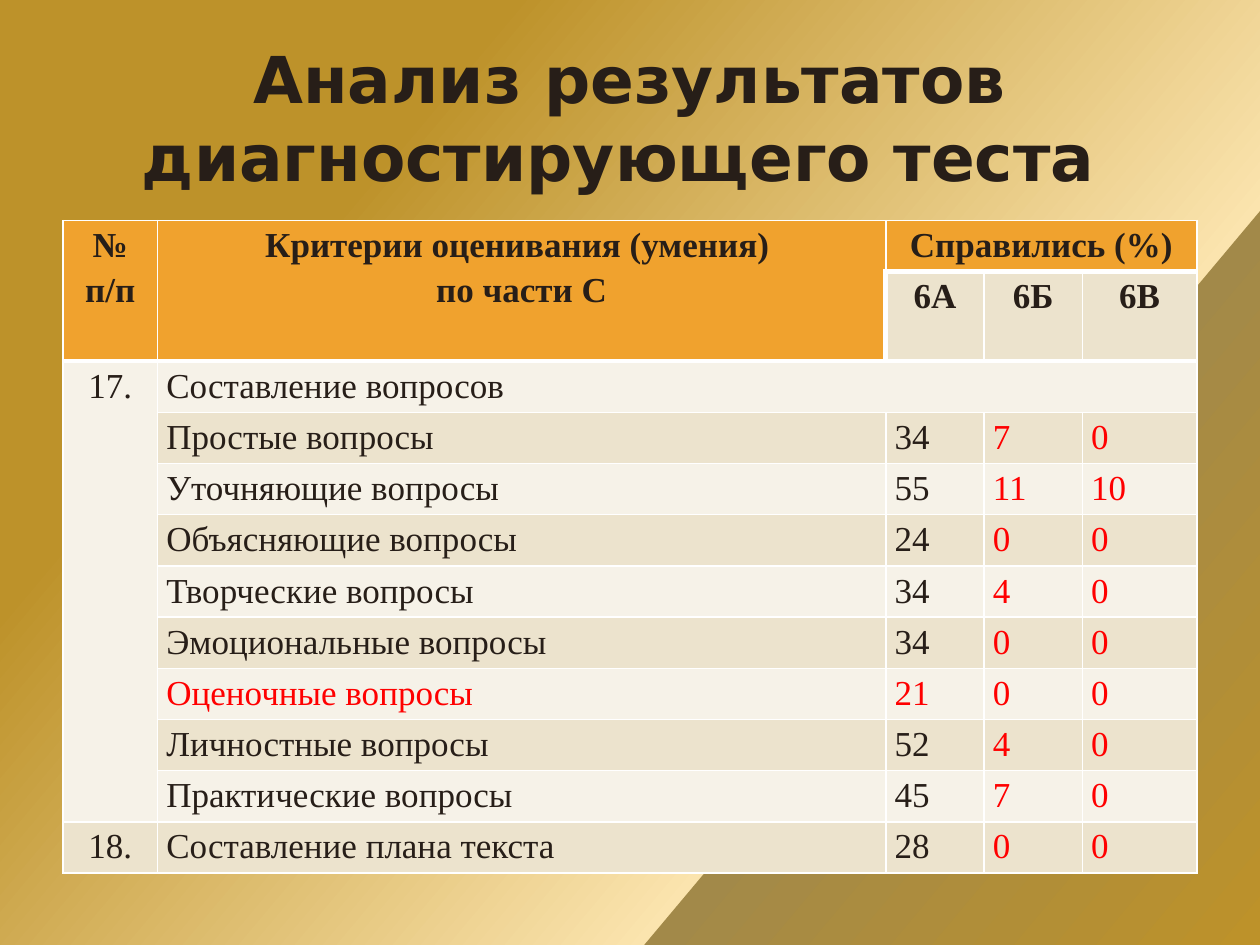
from lxml import etree
from pptx import Presentation
from pptx.dml.color import RGBColor
from pptx.enum.text import MSO_ANCHOR, MSO_AUTO_SIZE, PP_ALIGN
from pptx.oxml.ns import qn
from pptx.util import Inches, Pt

COLORS = {
    "ink": "271E18", "alert": "FF0000", "line": "FFFFFF",
    "header": "F0A22E", "band": "ECE3CD", "light": "F6F2E8",
    "gold": "BD922A", "cream": "FBE4AE", "olive": "A28949",
}
BACKDROP_STOPS = [(0, "gold"), (25, "gold"), (70, "cream"), (70, "olive"), (100, "gold")]
TITLE = "Анализ результатов диагностирующего теста "
COLUMN_WIDTHS = [0.75, 5.78, 0.78, 0.78, 0.91]
SUBHEADER_HEIGHT = 0.71
ROWS = [
    ["№ п/п", "Критерии оценивания (умения) \nпо части С", "Справились (%)", "", ""],
    ["", "", "6А", "6Б", "6В"],
    ["17.", "Составление вопросов", "", "", ""],
    ["", "Простые вопросы", "34", "7", "0"],
    ["", "Уточняющие вопросы", "55", "11", "10"],
    ["", "Объясняющие вопросы", "24", "0", "0"],
    ["", "Творческие вопросы", "34", "4", "0"],
    ["", "Эмоциональные вопросы", "34", "0", "0"],
    ["", "Оценочные вопросы", "21", "0", "0"],
    ["", "Личностные вопросы", "52", "4", "0"],
    ["", "Практические вопросы", "45", "7", "0"],
    ["18.", "Составление плана текста", "28", "0", "0"],
]
ALERT_ROW = 8
MERGES = [((0, 0), (1, 0)), ((0, 1), (1, 1)), ((0, 2), (0, 4)),
          ((2, 0), (10, 0)), ((2, 1), (2, 4))]


def rgb(name):
    return RGBColor.from_string(COLORS[name])


def style_text(frame, size, font_name, color, bold, align):
    for para in frame.paragraphs:
        para.alignment = align
        for span in para.runs:
            span.font.size = Pt(size)
            span.font.name = font_name
            span.font.bold = bold
            span.font.color.rgb = rgb(color)


def paint_background(page):
    fill = page.background.fill
    fill.gradient()
    fill.gradient_angle = 320
    stops = page.background._cSld.find(".//" + qn("a:gsLst"))
    for stop in list(stops):
        stops.remove(stop)
    for percent, color in BACKDROP_STOPS:
        stop = etree.SubElement(stops, qn("a:gs"), pos=str(percent * 1000))
        etree.SubElement(stop, qn("a:srgbClr"), val=COLORS[color])


def place_title(page, left, top, width, height):
    title = page.shapes.title
    title.left, title.top, title.width, title.height = map(Inches, (left, top, width, height))
    frame = title.text_frame
    frame.text = TITLE
    frame.word_wrap = True
    frame.auto_size = MSO_AUTO_SIZE.NONE
    frame.vertical_anchor = MSO_ANCHOR.MIDDLE
    style_text(frame, 36.9, "DejaVu Sans", "ink", True, PP_ALIGN.CENTER)


def draw_borders(cell, row, column):
    """White grid, with heavier lines under the headers and left of the class names."""
    heavy = {
        "L": (row, column) == (1, 2),
        "R": (row, column) == (1, 1),
        "T": row == 2 or (row == 1 and column >= 2),
        "B": row == 1 or (row == 0 and column >= 2),
    }
    properties = cell._tc.get_or_add_tcPr()
    for side, is_heavy in heavy.items():
        line = etree.SubElement(properties, qn("a:ln" + side), w=str(Pt(3 if is_heavy else 1)))
        solid = etree.SubElement(line, qn("a:solidFill"))
        etree.SubElement(solid, qn("a:srgbClr"), val=COLORS["line"])


def cell_fill(row, column):
    if row == 0 or (row == 1 and column < 2):
        return "header"
    if column == 0 and row < len(ROWS) - 1:
        return "light"
    return "band" if row % 2 else "light"


def style_cell(cell, row, column):
    draw_borders(cell, row, column)
    cell.fill.solid()
    cell.fill.fore_color.rgb = rgb(cell_fill(row, column))
    cell.margin_left = cell.margin_right = Inches(0.07)
    cell.margin_top = cell.margin_bottom = 0
    cell.text_frame.text = ROWS[row][column]
    is_header = row < 2
    is_alert = row == ALERT_ROW or (not is_header and column >= 3)
    style_text(cell.text_frame, 20, "Times New Roman", "alert" if is_alert else "ink", is_header,
               PP_ALIGN.CENTER if is_header or column == 0 else PP_ALIGN.LEFT)
    for para in cell.text_frame.paragraphs:
        para.line_spacing = 1.15


def place_results_table(page, left, top, width, height):
    frame = page.shapes.add_table(len(ROWS), len(COLUMN_WIDTHS), *map(Inches, (left, top, width, height)))
    table = frame.table
    for column, column_width in zip(table.columns, COLUMN_WIDTHS):
        column.width = Inches(column_width)
    row_height = (height - SUBHEADER_HEIGHT) / (len(ROWS) - 1)
    for index, row in enumerate(table.rows):
        row.height = Inches(SUBHEADER_HEIGHT if index == 1 else row_height)
    for row in range(len(ROWS)):
        for column in range(len(COLUMN_WIDTHS)):
            style_cell(table.cell(row, column), row, column)
    for first, last in MERGES:
        table.cell(*first).merge(table.cell(*last))


def main():
    deck = Presentation()
    deck.slide_width, deck.slide_height = Inches(10), Inches(7.5)
    page = deck.slides.add_slide(deck.slide_layouts[5])
    paint_background(page)
    place_title(page, 0.5, 0.3, 9, 1.25)
    place_results_table(page, 0.5, 1.75, 9, 5.18)
    deck.save("out.pptx")


if __name__ == "__main__":
    main()
